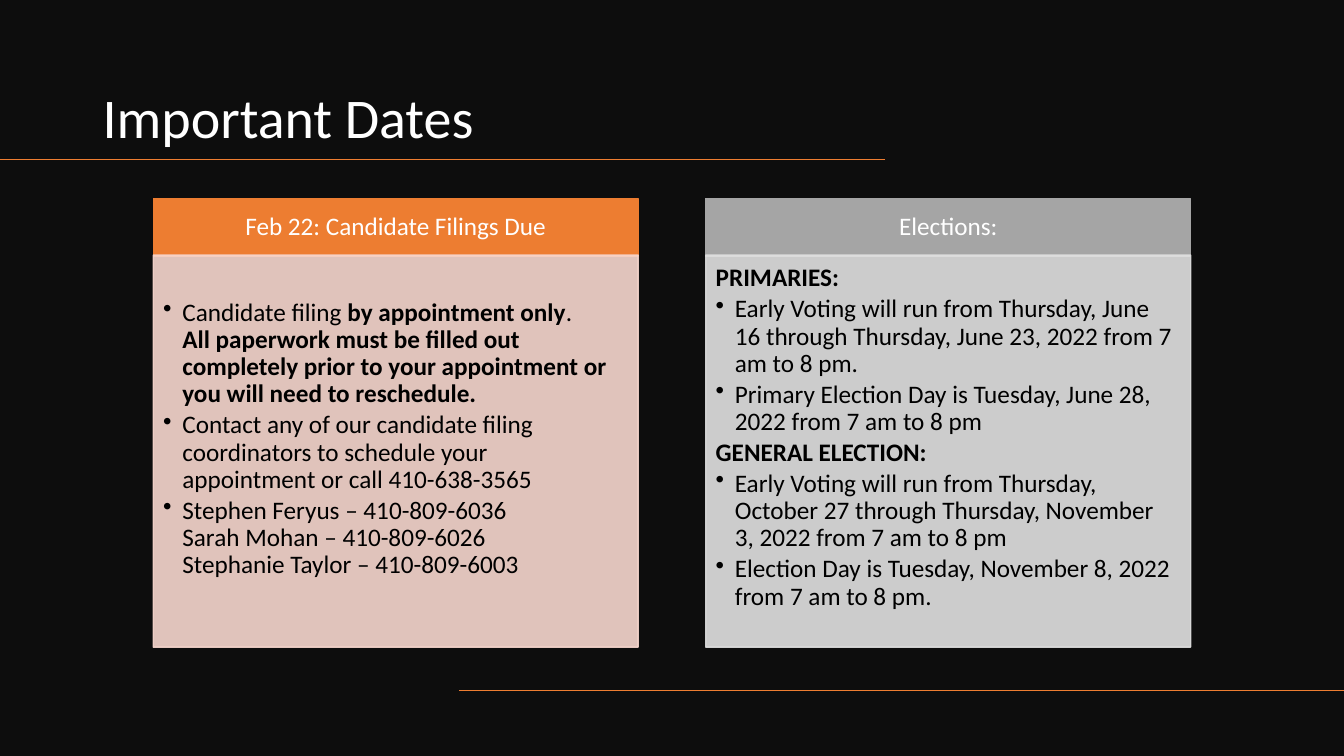
from pptx import Presentation
from pptx.dml.color import RGBColor
from pptx.enum.shapes import MSO_CONNECTOR, MSO_SHAPE
from pptx.enum.text import MSO_ANCHOR, PP_ALIGN
from pptx.util import Inches, Pt
from lxml.etree import SubElement
from pptx.oxml.ns import qn

COLORS = {
    "night": "0D0D0D", "white": "FFFFFF", "black": "000000",
    "orange": "ED7D31", "peach": "F8D7CE", "gray": "A5A5A5", "silver": "E1E1E1",
}
FONT = "Calibri"
TITLE = "Important Dates"
BREAK = ("\n", False)

# fmt: off
COLUMNS = [
    {
        "head": "Feb 22: Candidate Filings Due",
        "head_color": "orange", "body_color": "peach", "top_inset": 0.44,
        "items": [
            (True, [("Candidate filing ", False), ("by appointment only", True), (". ", False), BREAK,
                    ("All paperwork must be filled out completely prior to your appointment "
                     "or you will need to reschedule.", True)]),
            (True, [("Contact any of our candidate filing coordinators to schedule your "
                     "appointment or call 410-638-3565", False)]),
            (True, [("Stephen Feryus – 410-809-6036", False), BREAK,
                    ("Sarah Mohan – 410-809-6026", False), BREAK,
                    ("Stephanie Taylor – 410-809-6003", False)]),
        ],
    },
    {
        "head": "Elections:",
        "head_color": "gray", "body_color": "silver", "top_inset": 0.1,
        "items": [
            (False, [("PRIMARIES:", True)]),
            (True, [("Early Voting will run from Thursday, June 16 through Thursday, "
                     "June 23, 2022 from 7 am to 8 pm.", False)]),
            (True, [("Primary Election Day is Tuesday, June 28, 2022 from 7 am to 8 pm", False)]),
            (False, [("GENERAL ELECTION:", True)]),
            (True, [("Early Voting will run from Thursday, October 27 through Thursday, "
                     "November 3, 2022 from 7 am to 8 pm", False)]),
            (True, [("Election Day is Tuesday, November 8, 2022 from 7 am to 8 pm.", False)]),
        ],
    },
]
# fmt: on

RULES = [(8.78, 0, 1.58), (13.33, 4.55, 6.85)]
LEFT, PITCH, WIDTH = 1.52, 5.48, 4.81
HEAD_TOP, HEAD_H = 1.97, 0.57
BODY_TOP, BODY_H = 2.53, 3.89


def rgb(name):
    return RGBColor.from_string(COLORS[name])


def style(r, size, color, bold=False):
    r.font.name = FONT
    r.font.size = Pt(size)
    r.font.bold = bold
    r.font.color.rgb = rgb(color)


def set_frame(tf, anchor, insets):
    tf.word_wrap = True
    tf.vertical_anchor = anchor
    tf.margin_left, tf.margin_top, tf.margin_right, tf.margin_bottom = map(Inches, insets)


def add_box(s, x, y, w, h, color, outlined=True, alpha=None):
    sp = s.shapes.add_shape(MSO_SHAPE.RECTANGLE, Inches(x), Inches(y), Inches(w), Inches(h))
    sp.shadow.inherit = False
    sp.fill.solid()
    sp.fill.fore_color.rgb = rgb(color)
    if outlined:
        sp.line.color.rgb = rgb(color)
        sp.line.width = Pt(1)
    else:
        sp.line.fill.background()
    if alpha:
        for clr in sp._element.spPr.iter(qn("a:srgbClr")):
            SubElement(clr, qn("a:alpha")).set("val", str(alpha * 1000))
    return sp


def add_rule(s, x1, x2, y):
    ln = s.shapes.add_connector(MSO_CONNECTOR.STRAIGHT, Inches(x1), Inches(y), Inches(x2), Inches(y))
    ln.line.color.rgb = rgb("orange")
    ln.line.width = Pt(1)
    SubElement(ln._element.spPr, qn("a:effectLst"))


def add_heading(tf, text, size):
    p = tf.paragraphs[0]
    p.text = text
    p.line_spacing = 0.9
    style(p.runs[0], size, "white")
    return p


def add_item(p, bulleted, parts):
    p.alignment = PP_ALIGN.LEFT
    p.line_spacing = 0.9
    p.space_after = Pt(2.7)
    pPr = p._p.get_or_add_pPr()
    pPr.set("marL", str(Inches(0.19)))
    pPr.set("indent", str(-Inches(0.19)))
    if bulleted:
        SubElement(pPr, qn("a:buChar")).set("char", "•")
    else:
        SubElement(pPr, qn("a:buNone"))
    for text, bold in parts:
        if text == "\n":
            p.add_line_break()
        else:
            r = p.add_run()
            r.text = text
            style(r, 18, "black", bold)


def add_column(s, x, col):
    head = add_box(s, x, HEAD_TOP, WIDTH, HEAD_H, col["head_color"])
    set_frame(head.text_frame, MSO_ANCHOR.MIDDLE, (0.14, 0.08, 0.14, 0.08))
    add_heading(head.text_frame, col["head"], 18).alignment = PP_ALIGN.CENTER

    tf = add_box(s, x, BODY_TOP, WIDTH, BODY_H, col["body_color"], alpha=90).text_frame
    set_frame(tf, MSO_ANCHOR.TOP, (0.1, col["top_inset"], 0.14, 0.16))
    for i, (bulleted, parts) in enumerate(col["items"]):
        add_item(tf.add_paragraph() if i else tf.paragraphs[0], bulleted, parts)


def main():
    prs = Presentation()
    prs.slide_width, prs.slide_height = Inches(13.33), Inches(7.5)
    s = prs.slides.add_slide(prs.slide_layouts[6])
    add_box(s, 0, 0, 13.33, 7.5, "night", outlined=False)

    title = s.shapes.add_textbox(Inches(0.92), Inches(0.42), Inches(7.86), Inches(1.12))
    set_frame(title.text_frame, MSO_ANCHOR.BOTTOM, (0.1, 0.05, 0.1, 0.05))
    add_heading(title.text_frame, TITLE, 40)

    for rule in RULES:
        add_rule(s, *rule)
    for i, col in enumerate(COLUMNS):
        add_column(s, LEFT + i * PITCH, col)
    prs.save("out.pptx")


if __name__ == "__main__":
    main()
